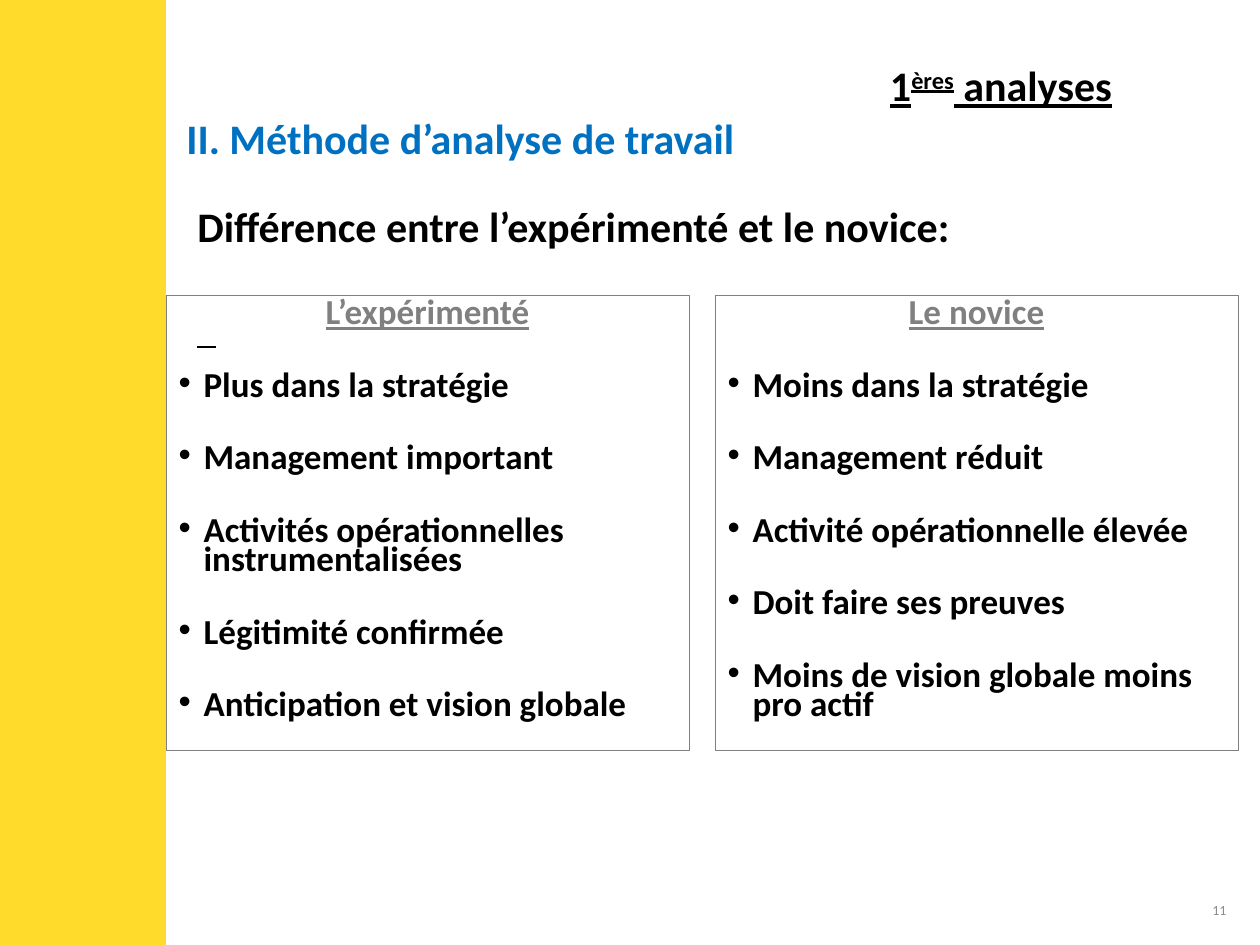
"""Build the slide that compares the experienced manager with the novice."""
from dataclasses import dataclass

from lxml import etree
from pptx import Presentation
from pptx.dml.color import RGBColor
from pptx.enum.shapes import MSO_CONNECTOR, MSO_SHAPE
from pptx.enum.text import MSO_ANCHOR, MSO_AUTO_SIZE, PP_ALIGN
from pptx.oxml.ns import qn
from pptx.util import Emu, Pt

RECTANGLE = MSO_SHAPE.RECTANGLE
STRAIGHT = MSO_CONNECTOR.STRAIGHT
TOP, MIDDLE = MSO_ANCHOR.TOP, MSO_ANCHOR.MIDDLE
NO_AUTOFIT = MSO_AUTO_SIZE.NONE
LEFT, CENTER, RIGHT = PP_ALIGN.LEFT, PP_ALIGN.CENTER, PP_ALIGN.RIGHT
TWO_CONTENT_LAYOUT = 3
PX_PER_INCH = 126
BULLET_INDENT = 25


@dataclass(frozen=True)
class Theme:
    """Colours and type sizes of the slide."""
    font: str = "Calibri"
    band: str = "FFDB2C"
    accent: str = "0070C0"
    ink: str = "000000"
    grey: str = "808080"
    page: str = "8C8C8C"
    heading_size: int = 24
    body_size: int = 20
    page_size: int = 8


def px(length):
    """Turn pixels into EMU."""
    return Emu(round(length * 914400 / PX_PER_INCH))


def apply(target, values):
    """Set every attribute named in a dict of format values."""
    for name, value in values.items():
        setattr(target, name, value)


class SlideBuilder:
    """Hold the theme and the current slide, and draw its elements."""

    def __init__(self, slide, theme):
        """Keep the slide and the theme."""
        self.slide = slide
        self.theme = theme

    def style(self, font, size, color, **values):
        """Format a font from the theme."""
        apply(font, {"name": self.theme.font, "size": Pt(size), **values})
        font.color.rgb = RGBColor.from_string(color)

    def place(self, shape, box, anchor):
        """Position a text shape and set up its frame."""
        names = ("left", "top", "width", "height")
        apply(shape, dict(zip(names, map(px, box))))
        apply(shape.text_frame, {"word_wrap": True, "auto_size": NO_AUTOFIT,
                                 "vertical_anchor": anchor})

    def band(self, box):
        """Draw the coloured side band."""
        shape = self.slide.shapes.add_shape(RECTANGLE, *map(px, box))
        shape.shadow.inherit = False
        shape.fill.solid()
        color = RGBColor.from_string(self.theme.band)
        shape.fill.fore_color.rgb = color
        shape.line.color.rgb = color
        shape.line.width = Pt(2)

    def rule(self, left, right, y):
        """Draw a short horizontal rule."""
        line = self.slide.shapes.add_connector(
            STRAIGHT, px(left), px(y), px(right), px(y))
        line.line.color.rgb = RGBColor.from_string(self.theme.ink)
        line.line.width = Pt(1.5)
        etree.SubElement(line._element.spPr, qn("a:effectLst"))

    def title(self, box, parts):
        """Fill the title from pairs of text and baseline shift."""
        shape = self.slide.shapes.title
        self.place(shape, box, MIDDLE)
        paragraph = shape.text_frame.paragraphs[0]
        paragraph.alignment = CENTER
        for text, baseline in parts:
            run = paragraph.add_run()
            run.text = text
            self.style(run.font, self.theme.heading_size, self.theme.ink,
                       bold=True, underline=True)
            if baseline:
                run._r.get_or_add_rPr().set("baseline", str(baseline * 1000))

    def text(self, box, text, size, color, bold=True, alignment=LEFT, anchor=TOP):
        """Add a one-paragraph text box."""
        shape = self.slide.shapes.add_textbox(*map(px, box))
        self.place(shape, box, anchor)
        paragraph = shape.text_frame.paragraphs[0]
        paragraph.text = text
        paragraph.alignment = alignment
        self.style(paragraph.font, size, color, bold=bold)

    def bullet(self, paragraph, indent):
        """Give a paragraph a hanging bullet, or none when indent is zero."""
        properties = paragraph._p.get_or_add_pPr()
        properties.set("marL", str(px(indent)))
        properties.set("indent", str(-px(indent)))
        if indent:
            etree.SubElement(properties, qn("a:buChar"), char="•")
        else:
            etree.SubElement(properties, qn("a:buNone"))

    def column(self, index, box, heading, items):
        """Fill a body placeholder with a heading and a bullet list."""
        shape = self.slide.placeholders[index]
        self.place(shape, box, TOP)
        shape.line.color.rgb = RGBColor.from_string(self.theme.grey)
        shape.line.width = Pt(0.25)
        frame = shape.text_frame
        for position, text in enumerate([heading, *items]):
            is_item = position > 0
            paragraph = frame.add_paragraph() if is_item else frame.paragraphs[0]
            paragraph.text = text
            self.bullet(paragraph, BULLET_INDENT if is_item else 0)
            apply(paragraph, {"alignment": LEFT if is_item else CENTER,
                              "line_spacing": 0.7,
                              "space_before": Pt(24.6 if is_item else 0)})
            self.style(paragraph.font, self.theme.body_size,
                       self.theme.ink if is_item else self.theme.grey,
                       bold=True, underline=not is_item)


def main():
    """Build and save the presentation."""
    presentation = Presentation()
    apply(presentation, {"slide_width": px(1260), "slide_height": px(945)})
    layout = presentation.slide_layouts[TWO_CONTENT_LAYOUT]
    theme = Theme()
    builder = SlideBuilder(presentation.slides.add_slide(layout), theme)

    builder.band((0, 0, 164, 945))
    builder.title((764, 35, 474, 100),
                  [("1", 0), ("ères", 30), (" analyses", 0)])
    builder.text((174, 106, 1042, 63), "II. Méthode d’analyse de travail",
                 theme.heading_size, theme.accent)
    builder.text((185, 194, 1002, 63),
                 "Différence entre l’expérimenté et le novice:",
                 theme.heading_size, theme.ink)
    builder.rule(197, 216, 347)
    columns = [
        ("L’expérimenté", ["Plus dans la stratégie", "Management important",
                           "Activités opérationnelles instrumentalisées",
                           "Légitimité confirmée",
                           "Anticipation et vision globale"]),
        ("Le novice", ["Moins dans la stratégie", "Management réduit",
                       "Activité opérationnelle élevée",
                       "Doit faire ses preuves",
                       "Moins de vision globale moins pro actif"]),
    ]
    for index, (heading, items) in enumerate(columns):
        builder.column(index + 1, (166 + 549 * index, 295, 523, 455),
                       heading, items)
    builder.text((1138, 885, 101, 50), "11", theme.page_size, theme.page,
                 bold=False, alignment=RIGHT, anchor=MIDDLE)
    presentation.save("out.pptx")


if __name__ == "__main__":
    main()
